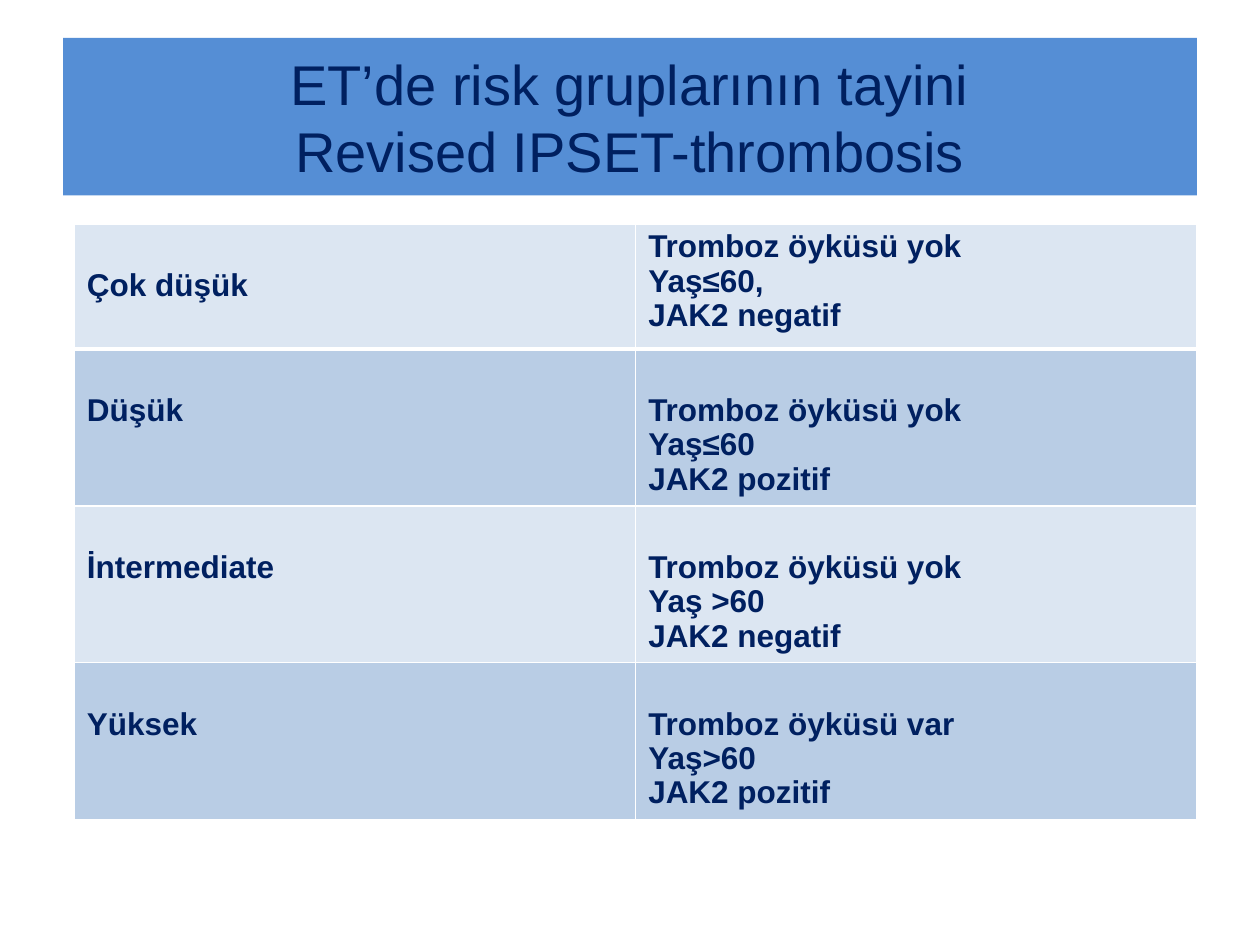
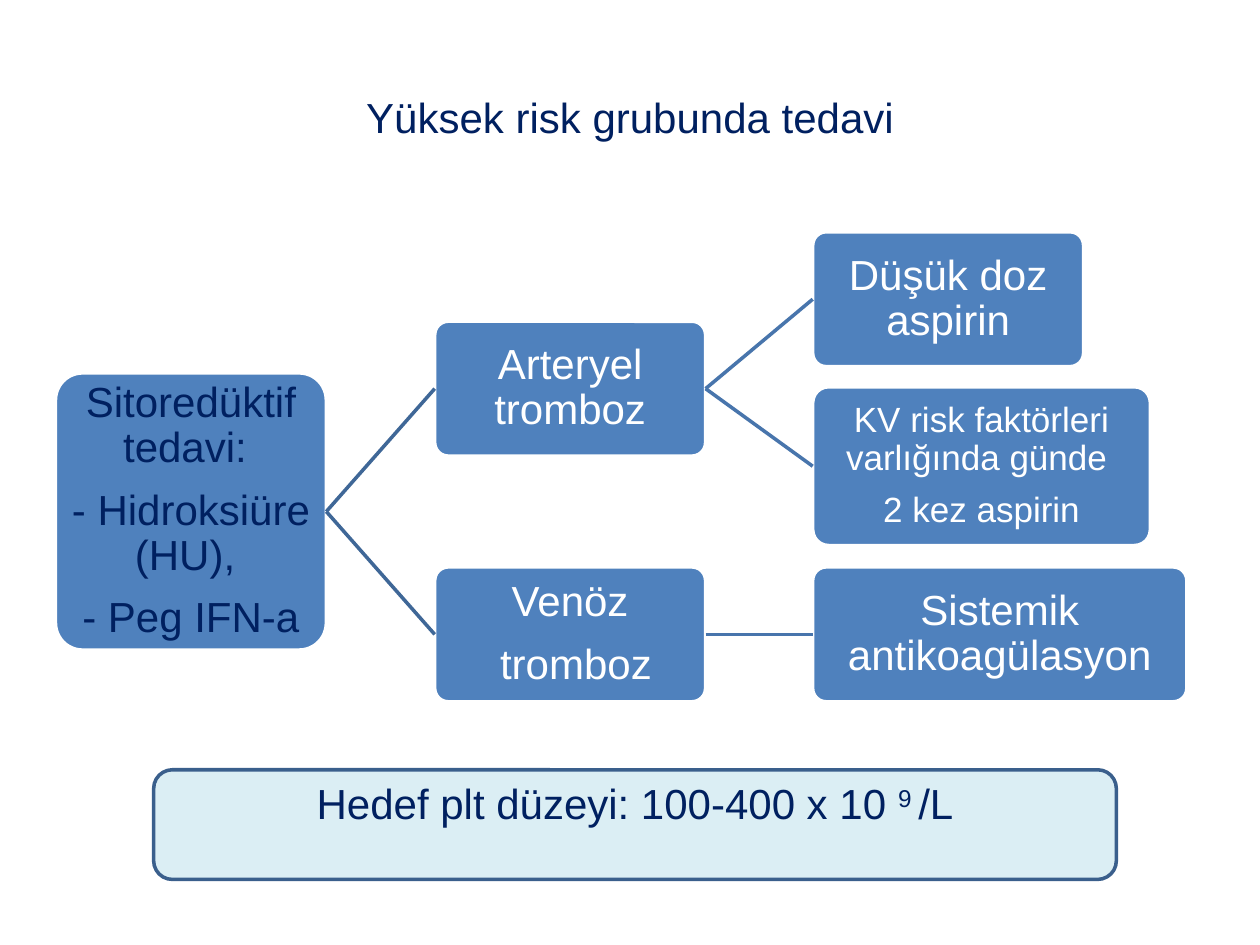
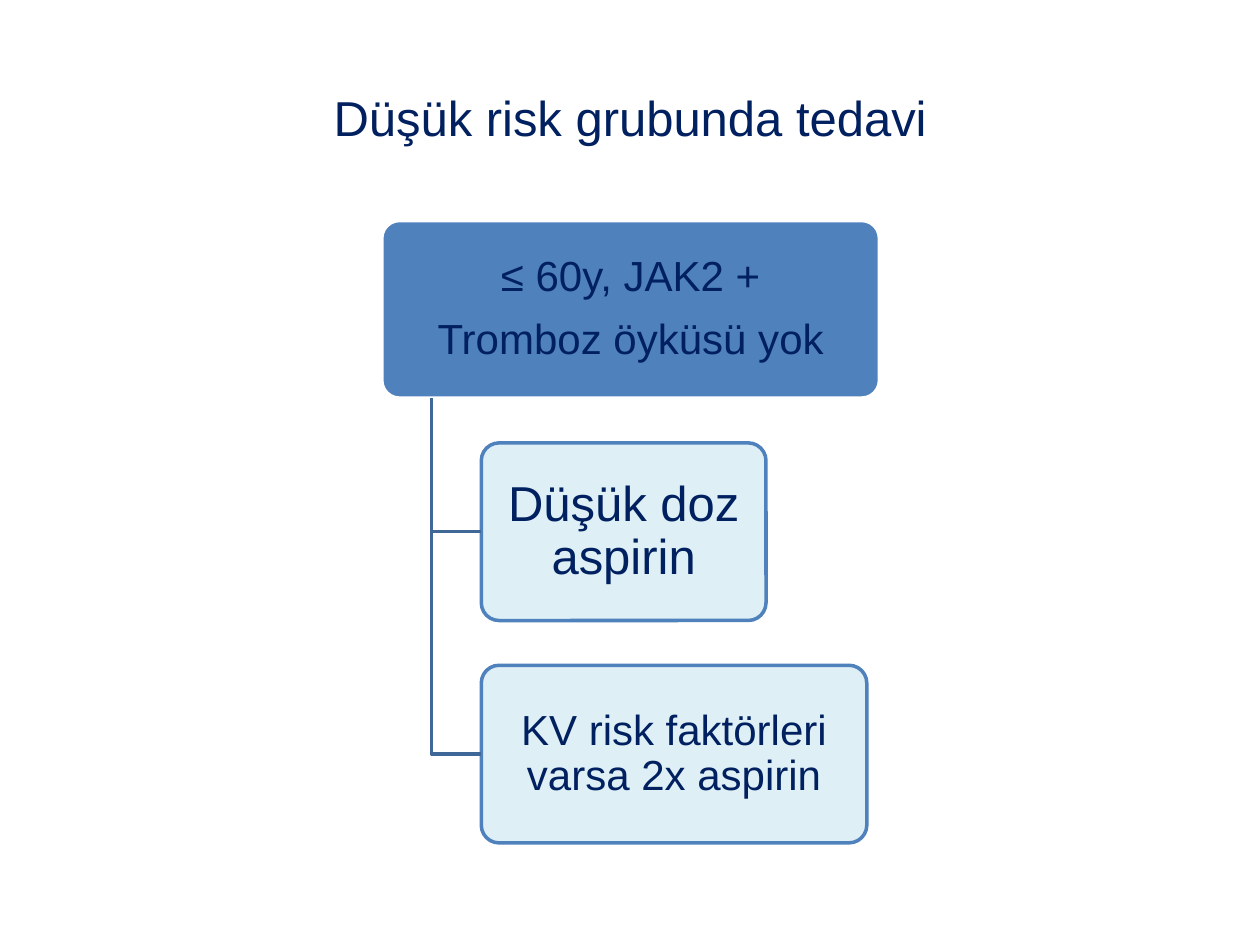
import copy

import pptx
import pptx.dml.color
import pptx.enum.shapes
import pptx.enum.text
import pptx.oxml
import pptx.oxml.ns
import pptx.util

NAVY, WHITE, BLUE, BAND = "002060", "FFFFFF", "4F81BD", "558ED5"
PALE, PALE_EDGE = "DBEEF4", "3A5F8C"
ROW_TINTS = "DCE6F2", "B9CDE5"
TRUNK, TWIG = "3F6797", "4875AC"
FONT = "Arial"
COLUMNS, ROWS = 20, 15


def rgb(hex_code):
    return pptx.dml.color.RGBColor.from_string(hex_code)


class Deck:
    """Draws styled elements on the current slide, placed on a 20 by 15 grid."""

    def __init__(self):
        self.presentation = pptx.Presentation()
        self.presentation.slide_width = pptx.util.Inches(10)
        self.presentation.slide_height = pptx.util.Inches(7.5)
        self.slide = None

    def x(self, columns):
        return round(self.presentation.slide_width * columns / COLUMNS)

    def y(self, rows):
        return round(self.presentation.slide_height * rows / ROWS)

    def area(self, left, top, width, height):
        return self.x(left), self.y(top), self.x(width), self.y(height)

    def style_text(self, frame, text, size, color, align, bold=False, spacing=1.0, after=0):
        frame.text = text
        frame.word_wrap = True
        for paragraph in frame.paragraphs:
            paragraph.alignment = align
            paragraph.line_spacing = spacing
            paragraph.space_after = pptx.util.Pt(after)
            for run in paragraph.runs:
                run.font.name = FONT
                run.font.size = pptx.util.Pt(size)
                run.font.bold = bold
                run.font.color.rgb = rgb(color)

    def new_slide(self, heading, size, band=None):
        self.slide = self.presentation.slides.add_slide(self.presentation.slide_layouts[5])
        title = self.slide.shapes.title
        title.left, title.top, title.width, title.height = self.area(1, 0.6, 18, 2.5)
        frame = title.text_frame
        self.style_text(frame, heading, size, NAVY, pptx.enum.text.PP_ALIGN.CENTER)
        frame.vertical_anchor = pptx.enum.text.MSO_ANCHOR.MIDDLE
        frame.auto_size = pptx.enum.text.MSO_AUTO_SIZE.NONE
        paragraph = frame.paragraphs[0]
        for line_break in paragraph._p.findall(pptx.oxml.ns.qn("a:br")):
            line_break.append(copy.deepcopy(paragraph.runs[0]._r.rPr))
        if band:
            title.fill.solid()
            title.fill.fore_color.rgb = rgb(band)

    def box(self, place, text, size=24, color=WHITE, fill=BLUE, edge=WHITE,
            opacity=None, corner=0.1, spacing=0.9, after=0.4):
        box = self.slide.shapes.add_shape(
            pptx.enum.shapes.MSO_SHAPE.ROUNDED_RECTANGLE, *self.area(*place))
        box.adjustments[0] = corner
        box.shadow.inherit = False
        box.fill.solid()
        box.fill.fore_color.rgb = rgb(fill)
        if opacity:
            shade = box._element.spPr.find(".//" + pptx.oxml.ns.qn("a:srgbClr"))
            shade.append(pptx.oxml.parse_xml(
                f'<a:alpha {pptx.oxml.ns.nsdecls("a")} val="{opacity * 1000}"/>'))
        box.line.color.rgb = rgb(edge)
        box.line.width = pptx.util.Pt(2)
        frame = box.text_frame
        frame.margin_left = frame.margin_right = pptx.util.Inches(0.02)
        frame.margin_top = frame.margin_bottom = pptx.util.Inches(0.02)
        frame.vertical_anchor = pptx.enum.text.MSO_ANCHOR.MIDDLE
        self.style_text(frame, text, size, color, pptx.enum.text.PP_ALIGN.CENTER,
                        spacing=spacing, after=size * after)
        return box

    def link(self, parent, child, color):
        link = self.slide.shapes.add_connector(
            pptx.enum.shapes.MSO_CONNECTOR.STRAIGHT, 0, 0, 0, 0)
        link.begin_connect(parent, 3)
        link.end_connect(child, 1)
        link.line.color.rgb = rgb(color)
        link.line.width = pptx.util.Pt(2)
        link._element.spPr.append(pptx.oxml.parse_xml(
            f'<a:effectLst {pptx.oxml.ns.nsdecls("a")}/>'))

    def elbow(self, parent, child):
        start_x = parent.left + parent.width // 10
        middle = child.top + child.height // 2
        outline = self.slide.shapes.build_freeform(start_x, parent.top + parent.height)
        outline.add_line_segments([(start_x, middle), (child.left, middle)], close=False)
        elbow = outline.convert_to_shape()
        elbow.shadow.inherit = False
        elbow.fill.background()
        elbow.line.color.rgb = rgb(TRUNK)
        elbow.line.width = pptx.util.Pt(2)

    def border(self, cell, side, width):
        cell._tc.get_or_add_tcPr().append(pptx.oxml.parse_xml(
            f'<a:ln{side} {pptx.oxml.ns.nsdecls("a")} w="{int(pptx.util.Pt(width))}">'
            f'<a:solidFill><a:srgbClr val="{WHITE}"/></a:solidFill></a:ln{side}>'))

    def table(self, place, entries, heights):
        table = self.slide.shapes.add_table(
            len(entries), len(entries[0]), *self.area(*place)).table
        table.first_row = table.horz_banding = False
        for index, (entry, height) in enumerate(zip(entries, heights)):
            table.rows[index].height = self.y(height)
            for column, text in enumerate(entry):
                cell = table.cell(index, column)
                for side in "LRTB":
                    heavy = (side, index) in (("B", 0), ("T", 1))
                    self.border(cell, side, 3 if heavy else 1)
                cell.fill.solid()
                cell.fill.fore_color.rgb = rgb(ROW_TINTS[index % 2])
                lowered = index > 0 or column == 0
                cell.margin_top = pptx.util.Inches(0.36 if lowered else 0.05)
                self.style_text(cell.text_frame, text, 18, NAVY,
                                pptx.enum.text.PP_ALIGN.LEFT, bold=True, spacing=0.97)


def risk_groups(deck):
    deck.new_slide("ET’de risk gruplarının tayini\vRevised IPSET-thrombosis", 32, BAND)
    groups = [
        ("Çok düşük", "Tromboz öyküsü yok\nYaş≤60,\nJAK2 negatif"),
        ("Düşük", "Tromboz öyküsü yok\nYaş≤60\nJAK2 pozitif"),
        ("İntermediate", "Tromboz öyküsü yok\nYaş >60\nJAK2 negatif"),
        ("Yüksek", "Tromboz öyküsü var\nYaş>60\nJAK2 pozitif"),
    ]
    deck.table((1.18, 3.56, 17.82, 9.45), groups, [1.98] + [2.49] * 3)


def high_risk(deck):
    deck.new_slide("Yüksek risk grubunda tedavi", 24)
    first, second, third = 0.88, 6.9, 12.9
    width, height = 4.3, 2.14
    therapy = deck.box((first, 5.92, width, 4.4),
                       "Sitoredüktif tedavi: \n- Hidroksiüre (HU), \n- Peg IFN-a", color=NAVY)
    arterial = deck.box((second, 5.1, width, height), "Arteryel tromboz")
    venous = deck.box((second, 9, width, height), "Venöz\n tromboz")
    aspirin = deck.box((third, 3.68, width, height), "Düşük doz aspirin")
    twice_daily = deck.box((third, 6.14, 5.36, 2.52),
                           "KV risk faktörleri varlığında günde \n2 kez aspirin", size=20)
    anticoagulation = deck.box((third, 9, 5.94, height), "Sistemik antikoagülasyon")
    for parent, child, color in [
        (therapy, arterial, TRUNK), (therapy, venous, TRUNK),
        (arterial, aspirin, TWIG), (arterial, twice_daily, TWIG),
        (venous, anticoagulation, TWIG),
    ]:
        deck.link(parent, child, color)

    target = deck.box((2.44, 12.22, 15.28, 1.74), "Hedef plt düzeyi: 100-400 x 10 ", color=NAVY,
                      fill=PALE, edge=PALE_EDGE, corner=0.17, spacing=1.0, after=0)
    target.text_frame.vertical_anchor = pptx.enum.text.MSO_ANCHOR.TOP
    paragraph = target.text_frame.paragraphs[0]
    for text, baseline in (("9 ", 30000), ("/L", 0)):
        run = paragraph.add_run()
        run.text = text
        run._r.insert(0, copy.deepcopy(paragraph.runs[0]._r.rPr))
        run._r.rPr.set("baseline", str(baseline))


def low_risk(deck):
    deck.new_slide("Düşük risk grubunda tedavi", 28)
    top, pitch, height = 3.5, 3.53, 2.82
    group = deck.box((6.06, top, 7.9, height), "≤ 60y, JAK2 +\nTromboz öyküsü yok", color=NAVY)
    treatments = [("Düşük doz aspirin", 28, 4.52),
                  ("KV risk faktörleri varsa 2x aspirin", 24, 6.12)]
    for step, (text, size, width) in enumerate(treatments, start=1):
        treatment = deck.box((7.64, top + step * pitch, width, height), text, size,
                             NAVY, PALE, BLUE, opacity=90)
        deck.elbow(group, treatment)


def main():
    deck = Deck()
    risk_groups(deck)
    high_risk(deck)
    low_risk(deck)
    deck.presentation.save("out.pptx")


if __name__ == "__main__":
    main()
